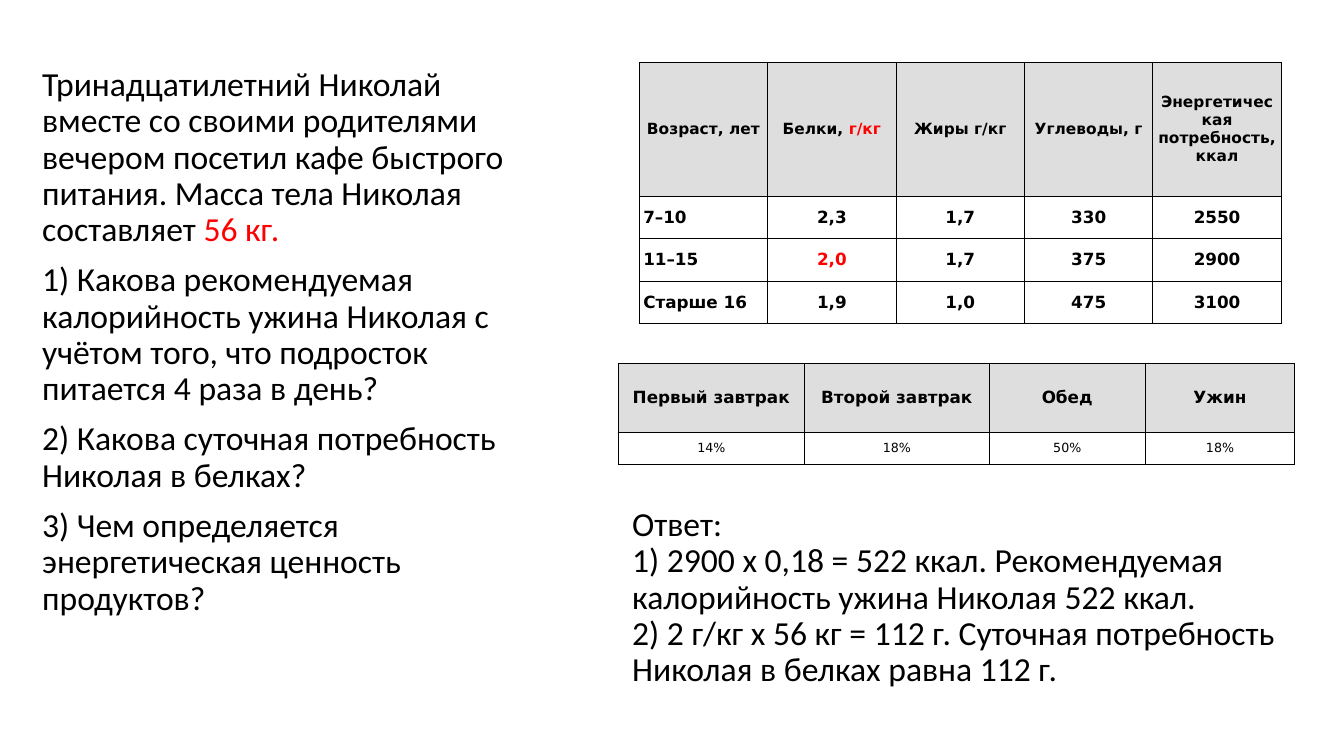
from pptx import Presentation
from pptx.dml.color import RGBColor
from pptx.enum.text import MSO_ANCHOR as Anchor, MSO_AUTO_SIZE as AutoSize, PP_ALIGN as Align
from pptx.oxml import parse_xml
from pptx.oxml.ns import nsdecls
from pptx.util import Inches, Pt

BLACK, RED, WHITE, GRAY = "000000", "FF0000", "FFFFFF", "DEDEDE"

TASK = [
    "Тринадцатилетний Николай вместе со своими родителями вечером посетил кафе "
    "быстрого питания. Масса тела Николая составляет |56 кг.",
    "1) Какова рекомендуемая калорийность ужина Николая с учётом того, "
    "что подросток питается 4 раза в день?",
    "2) Какова суточная потребность Николая в белках?",
    "3) Чем определяется энергетическая ценность продуктов?",
]
ANSWER = (
    "Ответ:\n"
    "1) 2900 х 0,18 = 522 ккал. Рекомендуемая калорийность ужина Николая 522 ккал.\n"
    "2) 2 г/кг х 56 кг = 112 г. Суточная потребность Николая в белках равна 112 г."
)
NUTRITION = [
    ["Возраст, лет", "Белки, |г/кг", "Жиры г/кг", "Углеводы, г",
     "Энергетическая потребность,ккал"],
    ["7–10", "2,3", "1,7", "330", "2550"],
    ["11–15", "|2,0", "1,7", "375", "2900"],
    ["Старше 16", "1,9", "1,0", "475", "3100"],
]
MEALS = [
    ["Первый завтрак", "Второй завтрак", "Обед", "Ужин"],
    ["14%", "18%", "50%", "18%"],
]


def color(value):
    return RGBColor.from_string(value)


def write(paragraph, text, font="Calibri", size=24, bold=False, align=Align.LEFT,
          line_spacing=None, space_before=0):
    paragraph.alignment = align
    paragraph.space_before = Pt(space_before)
    if line_spacing:
        paragraph.line_spacing = line_spacing
    for part, segment in enumerate(text.split("|")):
        for line, words in enumerate(segment.split("\n")):
            if line:
                paragraph.add_line_break()
            if not words:
                continue
            run = paragraph.add_run()
            run.text = words
            run.font.name = font
            run.font.size = Pt(size)
            run.font.bold = bold
            run.font.color.rgb = color(RED if part % 2 else BLACK)


class SlideBuilder:
    body_font = "Calibri"
    table_font = "DejaVu Sans"
    cell_margin = Inches(0.04)
    border_width = Pt(0.75)

    def __init__(self, presentation):
        self.slide = presentation.slides.add_slide(presentation.slide_layouts[5])

    def title(self, text, left, top, width, height):
        shape = self.slide.shapes.title
        shape.left, shape.top = Inches(left), Inches(top)
        shape.width, shape.height = Inches(width), Inches(height)
        frame = shape.text_frame
        frame.word_wrap = True
        frame.auto_size = AutoSize.NONE
        frame.vertical_anchor = Anchor.MIDDLE
        write(frame.paragraphs[0], text, font=self.body_font, line_spacing=0.9)

    def text(self, paragraphs, left, top, width, height):
        shape = self.slide.shapes.add_textbox(
            Inches(left), Inches(top), Inches(width), Inches(height))
        frame = shape.text_frame
        frame.word_wrap = True
        for index, text in enumerate(paragraphs):
            paragraph = frame.add_paragraph() if index else frame.paragraphs[0]
            write(paragraph, text, font=self.body_font, line_spacing=0.9, space_before=10)

    def table(self, rows, left, top, widths, heights, header_size, body_size,
              body_bold=False, first_column=Align.CENTER):
        table = self.slide.shapes.add_table(
            len(rows), len(widths), Inches(left), Inches(top),
            Inches(sum(widths)), Inches(sum(heights))).table
        for column, width in zip(table.columns, widths):
            column.width = Inches(width)
        for row, height in zip(table.rows, heights):
            row.height = Inches(height)
        for row_index, texts in enumerate(rows):
            header = row_index == 0
            for column_index, text in enumerate(texts):
                cell = table.cell(row_index, column_index)
                self.format_cell(cell, GRAY if header else WHITE)
                write(cell.text_frame.paragraphs[0], text, font=self.table_font,
                      size=header_size if header else body_size,
                      bold=header or body_bold,
                      align=Align.CENTER if header or column_index else first_column)

    def format_cell(self, cell, fill):
        cell.vertical_anchor = Anchor.MIDDLE
        cell.margin_left = cell.margin_right = self.cell_margin
        cell.margin_top = cell.margin_bottom = self.cell_margin
        properties = cell._tc.get_or_add_tcPr()
        for side in ("lnL", "lnR", "lnT", "lnB"):
            properties.append(parse_xml(
                f'<a:{side} {nsdecls("a")} w="{self.border_width}"><a:solidFill>'
                f'<a:srgbClr val="{BLACK}"/></a:solidFill></a:{side}>'))
        cell.fill.solid()
        cell.fill.fore_color.rgb = color(fill)


def main():
    presentation = Presentation()
    presentation.slide_width = Inches(13.33)
    presentation.slide_height = Inches(7.5)
    builder = SlideBuilder(presentation)
    builder.text(TASK, 0.32, 0.62, 5.04, 6.13)
    builder.table(MEALS, 6.13, 3.61, [1.85, 1.83, 1.55, 1.48], [0.68, 0.32],
                  header_size=12, body_size=9)
    builder.table(NUTRITION, 6.34, 0.62, [1.274] * 5, [1.33] + [0.42] * 3,
                  header_size=11, body_size=12, body_bold=True, first_column=Align.LEFT)
    builder.title(ANSWER, 6.17, 4.61, 6.71, 2.65)
    presentation.save("out.pptx")


if __name__ == "__main__":
    main()
